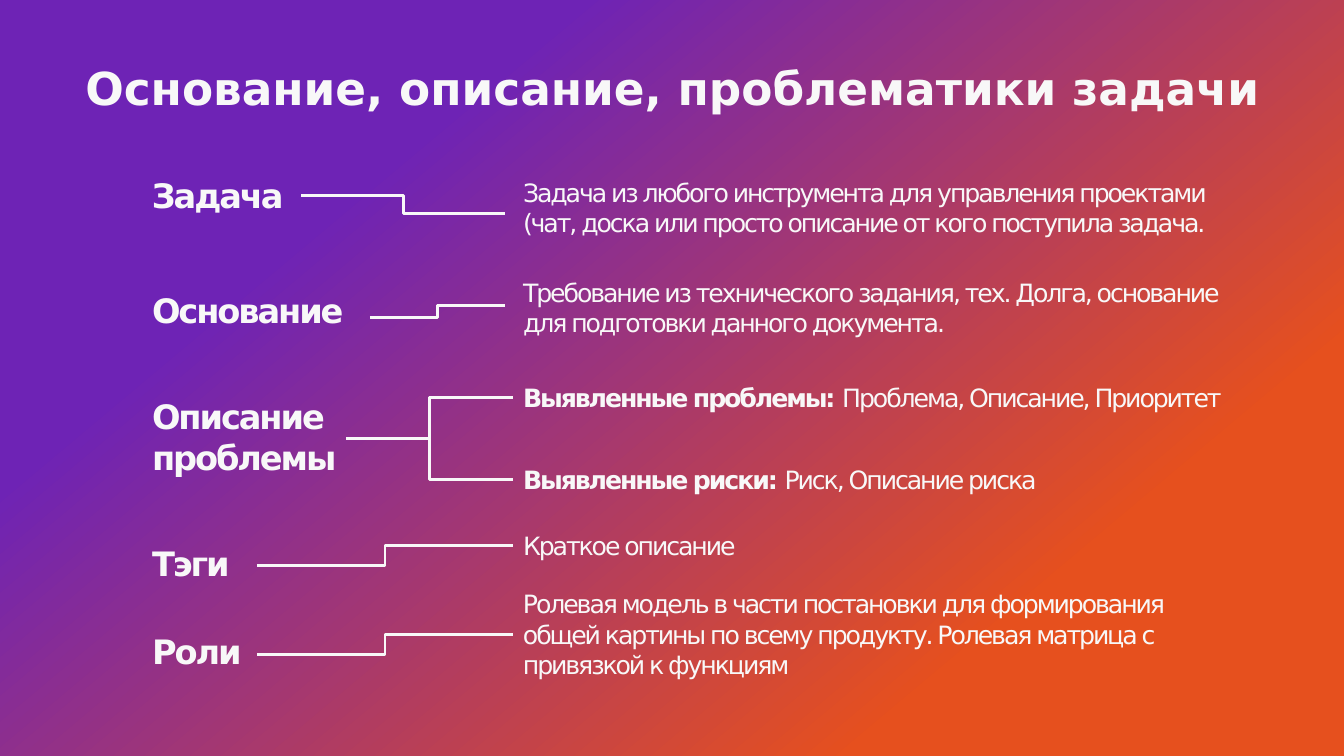
from lxml.etree import SubElement
from pptx import Presentation
from pptx.dml.color import RGBColor
from pptx.enum.shapes import MSO_CONNECTOR as Link, MSO_SHAPE as Kind
from pptx.enum.text import MSO_ANCHOR as Anchor, MSO_AUTO_SIZE as Auto, PP_ALIGN as Align
from pptx.oxml.ns import qn
from pptx.util import Pt

WIDE, HIGH = 960, 540
WHITE, VIOLET, ORANGE = "F8F8F8", "6E23B5", "E6501E"
LEFT, RIGHT = 101.5, 366.5
HEAD = "Основание, описание, проблематики задачи"

LABELS = [
    ("Задача", 121.7, 114, 1),
    ("Основание", 203.8, 159, 1),
    ("Описание проблемы", 279.4, 159, 2),
    ("Тэги", 384.5, 159, 1),
    ("Роли", 447.1, 159, 1),
]
NOTES = [
    ("", "Задача из любого инструмента для управления проектами "
     "(чат, доска или просто описание от кого поступила задача.", 123.1, 538, 2),
    ("", "Требование из технического задания, тех. Долга, основание "
     "для подготовки данного документа.", 194.4, 538, 2),
    ("Выявленные проблемы: ", "Проблема, Описание, Приоритет", 269.3, 538, 1),
    ("Выявленные риски: ", "Риск, Описание риска", 328.3, 538, 1),
    ("", "Краткое описание", 375.1, 538, 1),
    ("", "Ролевая модель в части постановки для формирования общей картины "
     "по всему продукту. Ролевая матрица с привязкой к функциям", 416.9, 512, 3),
]
LINKS = [
    (215.3, 139.7, 361, 152.6),
    (264.2, 226.6, 361, 218.4),
    (247.3, 313.2, RIGHT, 283.7),
    (247.3, 313.2, RIGHT, 342.7),
    (183.6, 404, RIGHT, 389.5),
    (183.6, 467.6, RIGHT, 453.2),
]

BASE = {"name": "DejaVu Sans"}
TITLE = {**BASE, "size": Pt(32.4), "bold": True}
LABEL = {**BASE, "size": Pt(24), "bold": True}
STRONG = {**BASE, "size": Pt(18), "bold": True}
PLAIN = {**BASE, "size": Pt(18), "bold": False}


def tint(code):
    return RGBColor.from_string(code)


def place(item, *box):
    for name, size in zip(("left", "top", "width", "height"), box):
        setattr(item, name, Pt(size))


def write(para, text, form, gap=None):
    run = para.add_run()
    run.text = text
    for name, value in form.items():
        setattr(run.font, name, value)
    run.font.color.rgb = tint(WHITE)
    if gap:
        run.font._element.set("spc", str(gap))


def block(left, top, width, high, parts):
    frame = slide.shapes.add_textbox(*map(Pt, (left, top, width, high))).text_frame
    frame.word_wrap = True
    frame.auto_size = Auto.SHAPE_TO_FIT_TEXT
    for text, form in parts:
        if text:
            write(frame.paragraphs[0], text, form, -150)


deck = Presentation()
deck.slide_width, deck.slide_height = Pt(WIDE), Pt(HIGH)
slide = deck.slides.add_slide(deck.slide_layouts[5])
back = slide.background.fill
back.solid()
back.fore_color.rgb = tint(ORANGE)

panel = slide.shapes.add_shape(Kind.RECTANGLE, 0, 0, Pt(WIDE), Pt(HIGH))
panel.shadow.inherit = False
panel.line.fill.background()
panel.fill.gradient()
panel.fill.gradient_angle = 310
for stop, (spot, code) in zip(panel.fill.gradient_stops, ((0.26, VIOLET), (0.78, ORANGE))):
    stop.position = spot
    stop.color.rgb = tint(code)

title = slide.shapes.title
slide.shapes._spTree.append(title._element)
place(title, 27, 28.8, 907, 72)
frame = title.text_frame
frame.auto_size = Auto.NONE
frame.word_wrap = True
frame.vertical_anchor = Anchor.MIDDLE
para = frame.paragraphs[0]
para.alignment = Align.CENTER
para.line_spacing = 0.9
write(para, HEAD, TITLE)

for text, top, width, rows in LABELS:
    block(LEFT, top, width, 7 + 29 * rows, [(text, LABEL)])

for lead, text, top, width, rows in NOTES:
    block(RIGHT, top, width, 7 + 22 * rows, [(lead, STRONG), (text, PLAIN)])

for ends in LINKS:
    link = slide.shapes.add_connector(Link.ELBOW, *map(Pt, ends))
    link.line.color.rgb = tint(WHITE)
    link.line.width = Pt(2)
    SubElement(link._element.spPr, qn("a:effectLst"))

deck.save("out.pptx")
